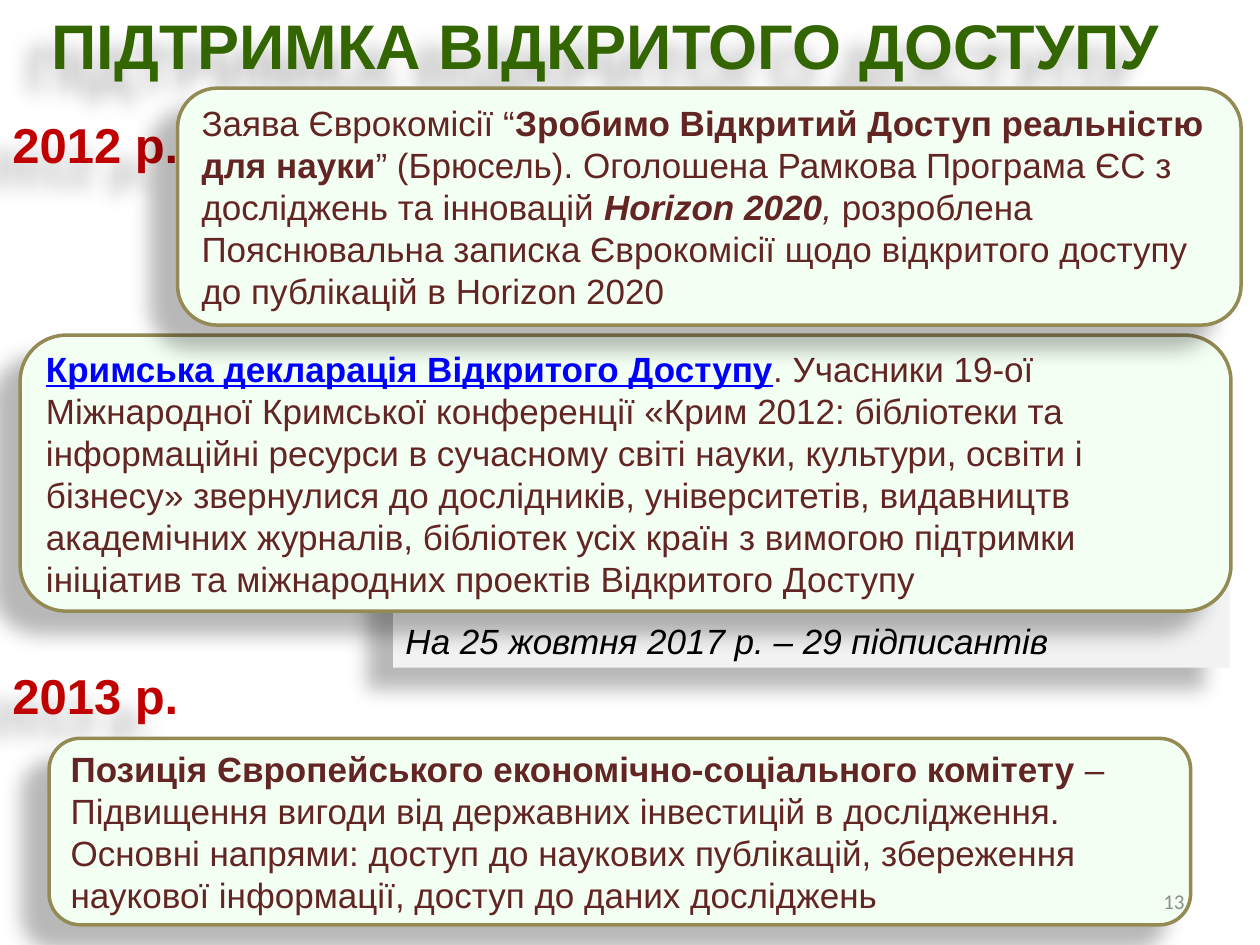
from lxml import etree
from pptx import Presentation, util as u
from pptx.dml.color import RGBColor
from pptx.enum import shapes, text
from pptx.oxml.ns import qn

COLORS = {
    "title": "336600", "year": "C00000", "body": "632523", "link": "0000FF",
    "card": "F3FFF3", "border": "948A54", "note": "F2F2F2",
    "black": "000000", "number": "8C8C8C",
}

# Content: runs are (text, style letters); b bold, i italic, u underlined link
TITLE = "ПІДТРИМКА ВІДКРИТОГО ДОСТУПУ"
NOTE = [("На 25 жовтня 2017 р. – 29 підписантів", "i")]
YEARS = [
    ("2013 р.", (0, 5.23, 1.95, 0.57)),
    ("2012 р.", (0, 0.86, 1.54, 0.57)),
]
CARDS = [
    ((0.16, 2.66, 9.61, 2.19), [
        ("Кримська декларація Відкритого Доступу", "bu"),
        (". Учасники 19-ої Міжнародної Кримської конференції «Крим 2012: "
         "бібліотеки та інформаційні ресурси в сучасному світі науки, культури, "
         "освіти і бізнесу» звернулися до дослідників, університетів, видавництв "
         "академічних журналів, бібліотек усіх країн з вимогою підтримки "
         "ініціатив та міжнародних проектів Відкритого Доступу", ""),
    ]),
    ((1.41, 0.7, 8.44, 1.88), [
        ("Заява Єврокомісії “", ""),
        ("Зробимо Відкритий Доступ реальністю для науки", "b"),
        ("” (Брюсель). Оголошена Рамкова Програма ЄС з досліджень та інновацій ", ""),
        ("Horizon 2020", "bi"),
        (", ", "i"),
        ("розроблена Пояснювальна записка Єврокомісії щодо відкритого доступу "
         "до публікацій в Horizon 2020", ""),
    ]),
    ((0.39, 5.86, 9.06, 1.48), [
        ("Позиція Європейського економічно-соціального комітету ", "b"),
        ("– Підвищення вигоди від державних інвестицій в дослідження. Основні "
         "напрями: доступ до наукових публікацій, збереження наукової інформації, "
         "доступ до даних досліджень", ""),
    ]),
]


def color(name):
    return RGBColor.from_string(COLORS[name])


def add_shadow(shape):
    shape.shadow.inherit = False
    effects = shape._element.spPr.find(qn("a:effectLst"))
    shadow = etree.SubElement(
        effects, qn("a:outerShdw"), blurRad=str(u.Pt(11.8)), dist=str(u.Pt(19.7)),
        dir=str(141 * 60000), algn="ctr", rotWithShape="0")
    tint = etree.SubElement(shadow, qn("a:srgbClr"), val=COLORS["black"])
    etree.SubElement(tint, qn("a:alpha"), val="28000")


def write(shape, runs, size, color_name, anchor=text.MSO_ANCHOR.TOP,
          align=text.PP_ALIGN.LEFT, font="Arial", wrap=True):
    frame = shape.text_frame
    frame.word_wrap = wrap
    frame.auto_size = text.MSO_AUTO_SIZE.NONE
    frame.vertical_anchor = anchor
    paragraph = frame.paragraphs[0]
    paragraph.alignment = align
    for words, style in runs:
        run = paragraph.add_run()
        run.text = words
        run.font.name, run.font.size = font, u.Pt(size)
        run.font.bold, run.font.italic = "b" in style, "i" in style
        run.font.underline = "u" in style
        run.font.color.rgb = color("link" if "u" in style else color_name)


def add_panel(slide, kind, box, fill, border=None):
    shape = slide.shapes.add_shape(kind, *map(u.Inches, box))
    shape.fill.solid()
    shape.fill.fore_color.rgb = color(fill)
    if border:
        shape.line.color.rgb = color(border)
        shape.line.width = u.Pt(2)
    else:
        shape.line.fill.background()
    add_shadow(shape)
    return shape


def main():
    presentation = Presentation()
    presentation.slide_width, presentation.slide_height = u.Inches(10), u.Inches(7.5)
    slide = presentation.slides.add_slide(presentation.slide_layouts[5])

    # Title
    title = slide.shapes.title
    title.left, title.top, title.width, title.height = map(
        u.Inches, (0.31, 0, 9.52, 0.71))
    write(title, [(TITLE, "b")], 36, "title")
    add_shadow(title)

    # Signatory note, tucked under the declaration card
    note = add_panel(slide, shapes.MSO_SHAPE.RECTANGLE, (3.12, 4.53, 6.64, 0.77), "note")
    write(note, NOTE, 20, "black", text.MSO_ANCHOR.BOTTOM)

    # Year labels
    for year, box in YEARS:
        label = slide.shapes.add_textbox(*map(u.Inches, box))
        write(label, [(year, "b")], 28, "year", wrap=False)
        add_shadow(label)

    # Text cards
    for box, runs in CARDS:
        card = add_panel(slide, shapes.MSO_SHAPE.ROUNDED_RECTANGLE, box, "card", "border")
        write(card, runs, 20, "body", text.MSO_ANCHOR.MIDDLE)

    # Slide number
    number = slide.shapes.add_textbox(*map(u.Inches, (7.17, 6.95, 2.33, 0.4)))
    write(number, [("13", "")], 12, "number", text.MSO_ANCHOR.MIDDLE,
          text.PP_ALIGN.RIGHT, "Calibri")

    presentation.save("out.pptx")


if __name__ == "__main__":
    main()
